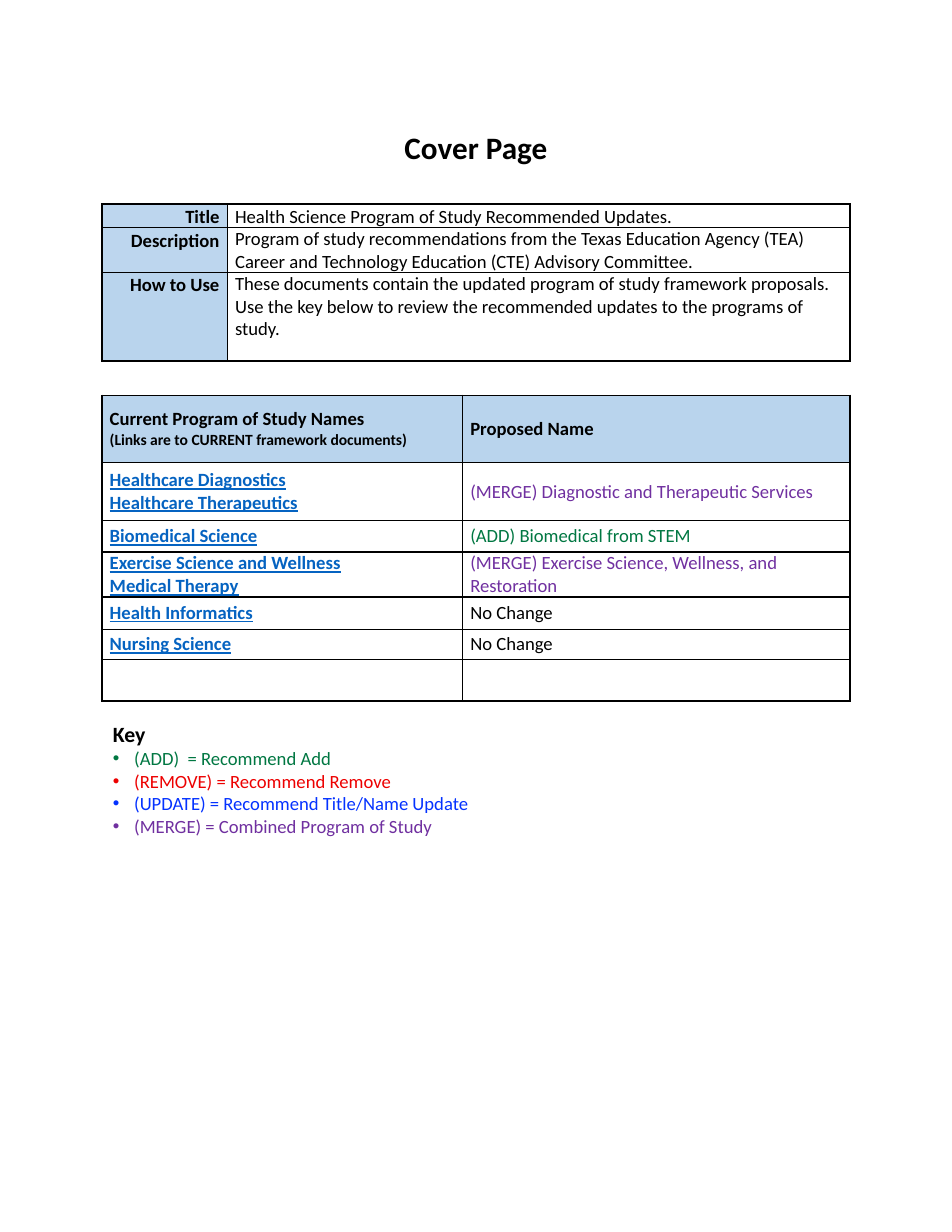
import pptx
import pptx.dml.color
import pptx.enum.text
import pptx.oxml
import pptx.oxml.ns
import pptx.util

ALIGN = pptx.enum.text.PP_ALIGN
ANCHOR = pptx.enum.text.MSO_ANCHOR
BLACK, LINK, GREEN, PURPLE = "000000", "0563C1", "007742", "7030A0"
LABEL, HEADER, WHITE = "BDD6EE", "B9D4ED", "FFFFFF"
NAMESPACE = pptx.oxml.ns.nsdecls("a")


def paint(target, color):
    target.solid()
    target.fore_color.rgb = pptx.dml.color.RGBColor.from_string(color)


def write(frame, text, size=12, color=BLACK, bold=False, underline=False,
          align=ALIGN.LEFT, spacing=1.0, bullet=False):
    para = frame.paragraphs[0]
    if para.runs:
        para = frame.add_paragraph()
    para.alignment = align
    para.line_spacing = spacing
    span = para.add_run()
    span.text = text
    span.font.name = "Calibri"
    span.font.size = pptx.util.Pt(size)
    span.font.bold = bold
    span.font.underline = underline
    paint(span.font.fill, color)
    if bullet:
        properties = para._p.get_or_add_pPr()
        indent = pptx.util.Inches(0.19)
        properties.set("marL", str(indent))
        properties.set("indent", str(-indent))
        for mark in ('<a:buFont %s typeface="Arial"/>', '<a:buChar %s char="•"/>'):
            properties.append(pptx.oxml.parse_xml(mark % NAMESPACE))


deck = pptx.Presentation()
deck.slide_width = pptx.util.Inches(8.5)
deck.slide_height = pptx.util.Inches(11)
column = deck.slide_width // 850
row = deck.slide_height // 1100
page = deck.slides.add_slide(deck.slide_layouts[6])

box = page.shapes.add_textbox(0, row * 106, column * 850, row * 50)
box.text_frame.word_wrap = True
box.text_frame.vertical_anchor = ANCHOR.MIDDLE
write(box.text_frame, "Cover Page", size=20, bold=True, align=ALIGN.CENTER)

label = {"bold": True, "align": ALIGN.RIGHT, "spacing": 1.07}
link = {"bold": True, "color": LINK, "underline": True}
merge = {"color": PURPLE}

about_rows = [
    (21, LABEL, None, [("Title", label)],
     [("Health Science Program of Study Recommended Updates.", {"spacing": 1.07})]),
    (40, LABEL, None, [("Description", label)],
     [("Program of study recommendations from the Texas Education Agency (TEA) "
       "Career and Technology Education (CTE) Advisory Committee.", {})]),
    (79, HEADER, None, [("How to Use", label)],
     [("These documents contain the updated program of study framework proposals. "
       "Use the key below to review the recommended updates to the programs of study.", {})]),
]
program_rows = [
    (60, HEADER, HEADER,
     [("Current Program of Study Names", {"bold": True}),
      ("(Links are to CURRENT framework documents)", {"bold": True, "size": 10})],
     [("Proposed Name", {"bold": True})]),
    (52, WHITE, None, [("Healthcare Diagnostics", link), ("Healthcare Therapeutics", link)],
     [("(MERGE) Diagnostic and Therapeutic Services", merge)]),
    (28, WHITE, None, [("Biomedical Science", link)],
     [("(ADD) Biomedical from STEM", {"color": GREEN})]),
    (40, WHITE, None, [("Exercise Science and Wellness", link), ("Medical Therapy", link)],
     [("(MERGE) Exercise Science, Wellness, and Restoration", merge)]),
    (29, WHITE, None, [("Health Informatics", link)], [("No Change", {})]),
    (27, WHITE, None, [("Nursing Science", link)], [("No Change", {})]),
    (37, WHITE, None, [], []),
]

for top, widths, anchor, rows in [
    (182, (112, 556), ANCHOR.TOP, about_rows),
    (353, (322, 346), ANCHOR.MIDDLE, program_rows),
]:
    height = sum(entry[0] for entry in rows)
    table = page.shapes.add_table(
        len(rows), 2, column * 91, row * top, column * sum(widths), row * height).table
    table.first_row = False
    table.horz_banding = False
    for index, width in enumerate(widths):
        table.columns[index].width = column * width
    for index, (height, *fills, name, detail) in enumerate(rows):
        table.rows[index].height = row * height
        for cell, fill, lines in zip(table.rows[index].cells, fills, (name, detail)):
            cell.margin_left = cell.margin_right = column * 7
            cell.margin_top = cell.margin_bottom = 0
            cell.vertical_anchor = anchor
            for text, style in lines:
                write(cell.text_frame, text, **style)
            properties = cell._tc.get_or_add_tcPr()
            for side in ("lnL", "lnR", "lnT", "lnB"):
                properties.append(pptx.oxml.parse_xml(
                    f'<a:{side} {NAMESPACE} w="12700"><a:solidFill>'
                    f'<a:srgbClr val="{BLACK}"/></a:solidFill></a:{side}>'))
            if fill:
                paint(cell.fill, fill)
            else:
                cell.fill.background()

box = page.shapes.add_textbox(column * 91, row * 639, column * 570, row * 114)
box.text_frame.word_wrap = True
box.text_frame.auto_size = pptx.enum.text.MSO_AUTO_SIZE.SHAPE_TO_FIT_TEXT
write(box.text_frame, "Key", size=14, bold=True)
for text, color in [
    ("(ADD)  = Recommend Add", GREEN),
    ("(REMOVE) = Recommend Remove", "ED0000"),
    ("(UPDATE) = Recommend Title/Name Update", "0432FF"),
    ("(MERGE) = Combined Program of Study", PURPLE),
]:
    write(box.text_frame, text, color=color, bullet=True)

deck.save("out.pptx")
